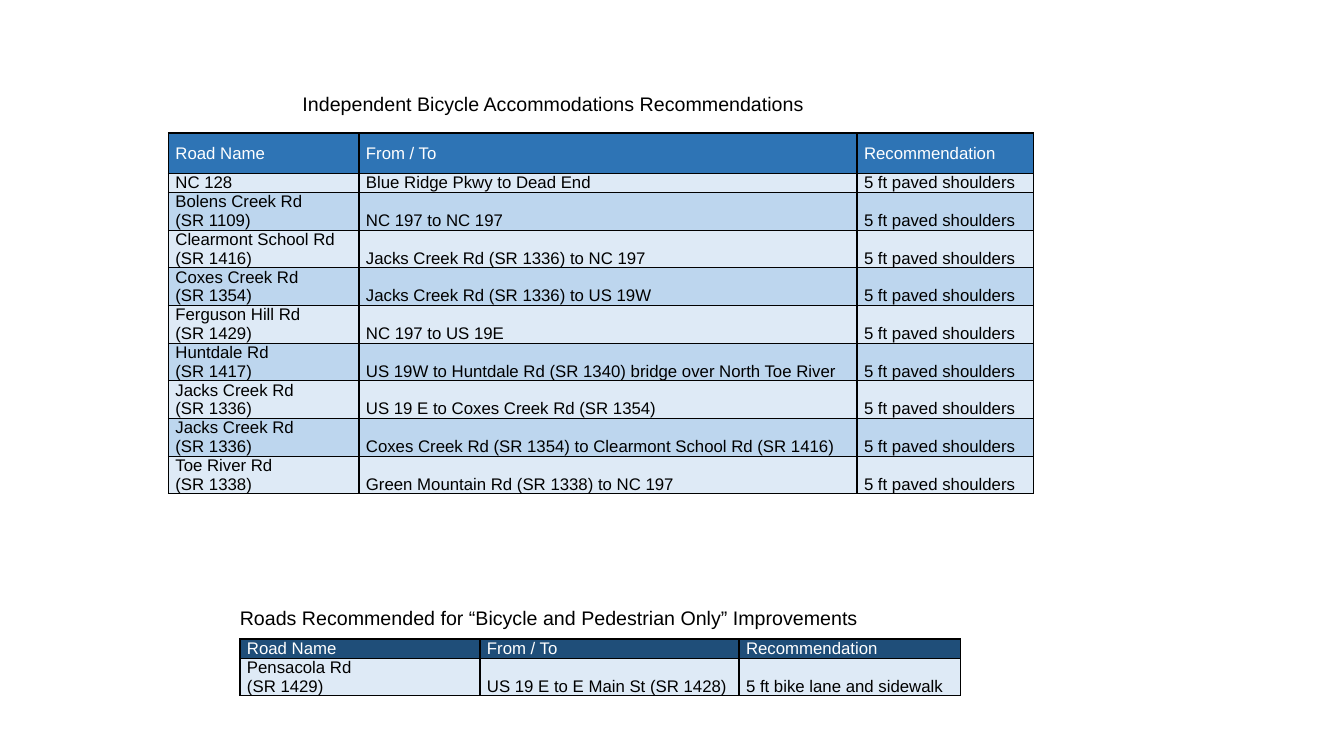
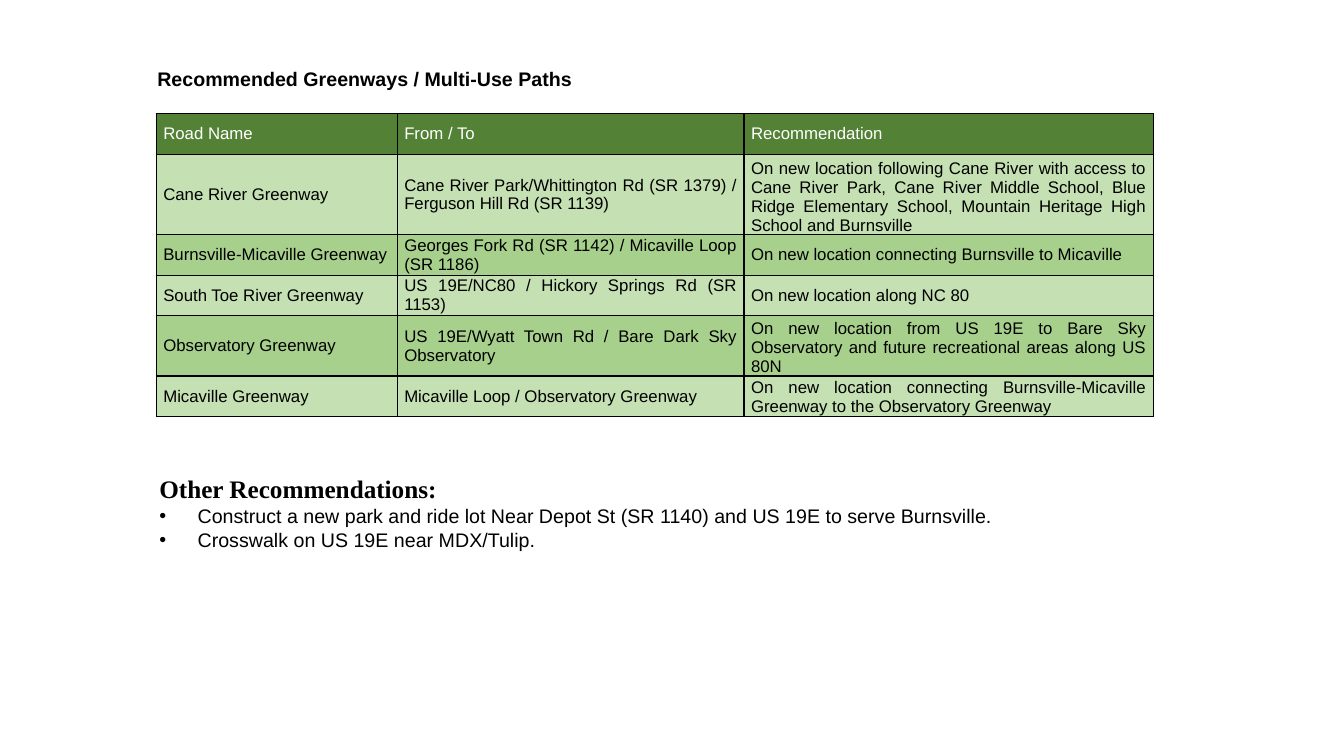
import pptx
import pptx.util
import pptx.dml.color
import pptx.enum.text
import pptx.oxml
import pptx.oxml.ns
import lxml.etree

Inches = pptx.util.Inches
Pt = pptx.util.Pt
ALIGN = pptx.enum.text.PP_ALIGN
ANCHOR = pptx.enum.text.MSO_ANCHOR
ANCHORS = {"t": ANCHOR.TOP, "m": ANCHOR.MIDDLE, "b": ANCHOR.BOTTOM}

BLACK, WHITE = "000000", "FFFFFF"
HEADINGS = ("Road Name", "From / To", "Recommendation")
LINE, TWO_LINES = 0.19, 0.37
SHOULDERS = "5 ft paved shoulders"

CAPTION = {"size": Pt(14), "name": "Arial", "bold": False}
BOLD_CAPTION = {**CAPTION, "bold": True}
SECTION = {"size": Pt(18), "name": "Times New Roman", "bold": True}
CELL_FONT = {"size": Pt(12), "name": "Arial", "bold": False}
CELL_FORMAT = {
    "margin_left": Inches(0.07),
    "margin_right": Inches(0.07),
    "margin_top": 0,
    "margin_bottom": 0,
}
FRAME_FORMAT = {
    "vertical_anchor": ANCHOR.TOP,
    "auto_size": pptx.enum.text.MSO_AUTO_SIZE.NONE,
    "margin_left": Inches(0.1),
    "margin_right": Inches(0.1),
    "margin_top": Inches(0.05),
    "margin_bottom": Inches(0.05),
}

bicycle_roads = [
    ("NC 128", "Blue Ridge Pkwy to Dead End"),
    ("Bolens Creek Rd\n(SR 1109)", "NC 197 to NC 197"),
    ("Clearmont School Rd\n(SR 1416)", "Jacks Creek Rd (SR 1336) to NC 197"),
    ("Coxes Creek Rd\n(SR 1354)", "Jacks Creek Rd (SR 1336) to US 19W"),
    ("Ferguson Hill Rd\n(SR 1429)", "NC 197 to US 19E"),
    ("Huntdale Rd\n(SR 1417)", "US 19W to Huntdale Rd (SR 1340) bridge over North Toe River"),
    ("Jacks Creek Rd\n(SR 1336)", "US 19 E to Coxes Creek Rd (SR 1354)"),
    ("Jacks Creek Rd\n(SR 1336)", "Coxes Creek Rd (SR 1354) to Clearmont School Rd (SR 1416)"),
    ("Toe River Rd\n(SR 1338)", "Green Mountain Rd (SR 1338) to NC 197"),
]

bicycle_table = {
    "at": (1.67, 1.32),
    "columns": (1.89, 4.94, 1.75),
    "header": (0.4, "mmm"),
    "fills": ("2E74B5", "DEEAF6", "BDD6EE"),
    "rows": [
        (TWO_LINES if "\n" in road else LINE, "tbb", (road, extent, SHOULDERS))
        for road, extent in bicycle_roads
    ],
}

pedestrian_table = {
    "at": (2.38, 6.34),
    "columns": (2.38, 2.57, 2.2),
    "header": (LINE, "ttt"),
    "fills": ("1F4E79", "DEEAF6", "BDD6EE"),
    "rows": [
        (TWO_LINES, "tbb", ("Pensacola Rd\n(SR 1429)", "US 19 E to E Main St (SR 1428)",
                            "5 ft bike lane and sidewalk")),
    ],
}

greenway_table = {
    "at": (1.55, 1.13),
    "columns": (2.39, 3.44, 4.06),
    "header": (0.4, "mmm"),
    "fills": ("538135", "C5E0B3", "A8D08D"),
    "rows": [
        (0.8, "mmb", ("Cane River Greenway",
                      "Cane River Park/Whittington Rd (SR 1379) / Ferguson Hill Rd (SR 1139)",
                      "On new location following Cane River with access to Cane River Park, "
                      "Cane River Middle School, Blue Ridge Elementary School, "
                      "Mountain Heritage High School and Burnsville")),
        (0.4, "mmm", ("Burnsville-Micaville Greenway",
                      "Georges Fork Rd (SR 1142) / Micaville Loop (SR 1186)",
                      "On new location connecting Burnsville to Micaville")),
        (0.4, "mmm", ("South Toe River Greenway",
                      "US 19E/NC80 / Hickory Springs Rd (SR 1153)",
                      "On new location along NC 80")),
        (0.6, "mmb", ("Observatory Greenway",
                      "US 19E/Wyatt Town Rd / Bare Dark Sky Observatory",
                      "On new location from US 19E to Bare Sky Observatory and future "
                      "recreational areas along US 80N")),
        (0.4, "mmb", ("Micaville Greenway",
                      "Micaville Loop / Observatory Greenway",
                      "On new location connecting Burnsville-Micaville Greenway to the "
                      "Observatory Greenway")),
    ],
}

other_recommendations = [
    ("Other Recommendations:", SECTION, False),
    ("Construct a new park and ride lot Near Depot St (SR 1140) and US 19E to serve Burnsville.",
     CAPTION, True),
    ("Crosswalk on US 19E near MDX/Tulip.", CAPTION, True),
]


def color(value):
    return pptx.dml.color.RGBColor.from_string(value)


def apply(target, values):
    for name, value in values.items():
        setattr(target, name, value)


def style_font(font, values, ink=BLACK):
    apply(font, values)
    font.color.rgb = color(ink)


def place(part, at, wrap=True):
    left, top, width, height = map(Inches, at)
    apply(part, {"left": left, "top": top, "width": width, "height": height})
    apply(part.text_frame, {**FRAME_FORMAT, "word_wrap": wrap})


def write_caption(caption, text, at, font, wrap=True):
    place(caption, at, wrap)
    line = caption.text_frame.paragraphs[0]
    line.alignment = ALIGN.LEFT
    line.add_run().text = text
    style_font(line.runs[0].font, font)


def write_list(body, items, at):
    place(body, at)
    frame = body.text_frame
    for index, (text, font, bulleted) in enumerate(items):
        line = frame.add_paragraph() if index else frame.paragraphs[0]
        apply(line, {"space_before": Pt(0), "alignment": ALIGN.LEFT})
        line.add_run().text = text
        style_font(line.runs[0].font, font)
        properties = line._p.get_or_add_pPr()
        indent = Inches(0.38) if bulleted else 0
        properties.set("marL", str(indent))
        properties.set("indent", str(-indent))
        if bulleted:
            lxml.etree.SubElement(properties, pptx.oxml.ns.qn("a:buChar")).set("char", "•")
        else:
            lxml.etree.SubElement(properties, pptx.oxml.ns.qn("a:buNone"))


def border_cell(cell):
    properties = cell._tc.get_or_add_tcPr()
    for position, side in enumerate(("lnL", "lnR", "lnT", "lnB")):
        properties.insert(position, pptx.oxml.parse_xml(
            f'<a:{side} {pptx.oxml.ns.nsdecls("a")} w="{Pt(1)}">'
            f'<a:solidFill><a:srgbClr val="{BLACK}"/></a:solidFill></a:{side}>'))


def add_road_table(slide, content):
    rows = [(*content["header"], HEADINGS), *content["rows"]]
    header_fill, *bands = content["fills"]
    left, top = map(Inches, content["at"])
    width = Inches(sum(content["columns"]))
    height = Inches(sum(row[0] for row in rows))
    roads = slide.shapes.add_table(len(rows), len(HEADINGS), left, top, width, height).table
    roads.horz_banding = False
    for column, column_width in zip(roads.columns, content["columns"]):
        column.width = Inches(column_width)
    for r, (row_height, anchors, texts) in enumerate(rows):
        roads.rows[r].height = Inches(row_height)
        fill = bands[(r - 1) % 2] if r else header_fill
        for c, (anchor, text) in enumerate(zip(anchors, texts)):
            cell = roads.cell(r, c)
            apply(cell, {**CELL_FORMAT, "vertical_anchor": ANCHORS[anchor], "text": text})
            cell.fill.solid()
            cell.fill.fore_color.rgb = color(fill)
            border_cell(cell)
            for line in cell.text_frame.paragraphs:
                line.alignment = ALIGN.JUSTIFY
                style_font(line.runs[0].font, CELL_FONT, BLACK if r else WHITE)


def main():
    deck = pptx.Presentation()
    apply(deck, {"slide_width": Inches(13.33), "slide_height": Inches(7.5)})

    bicycle = deck.slides.add_slide(deck.slide_layouts[5])
    write_caption(bicycle.shapes.title, "Independent Bicycle Accommodations Recommendations",
                  (2.9, 0.86, 5.2, 0.34), CAPTION, wrap=False)
    add_road_table(bicycle, bicycle_table)
    pedestrian_caption = bicycle.shapes.add_textbox(0, 0, 0, 0)
    write_caption(pedestrian_caption,
                  "Roads Recommended for “Bicycle and Pedestrian Only” Improvements",
                  (2.28, 5.96, 6.67, 0.34), CAPTION)
    add_road_table(bicycle, pedestrian_table)

    greenways = deck.slides.add_slide(deck.slide_layouts[1])
    write_caption(greenways.shapes.title, "Recommended Greenways / Multi-Use Paths",
                  (1.46, 0.61, 5.66, 0.34), BOLD_CAPTION)
    write_list(greenways.placeholders[1], other_recommendations, (1.48, 4.65, 10.37, 1.05))
    add_road_table(greenways, greenway_table)

    deck.save("out.pptx")


if __name__ == "__main__":
    main()
